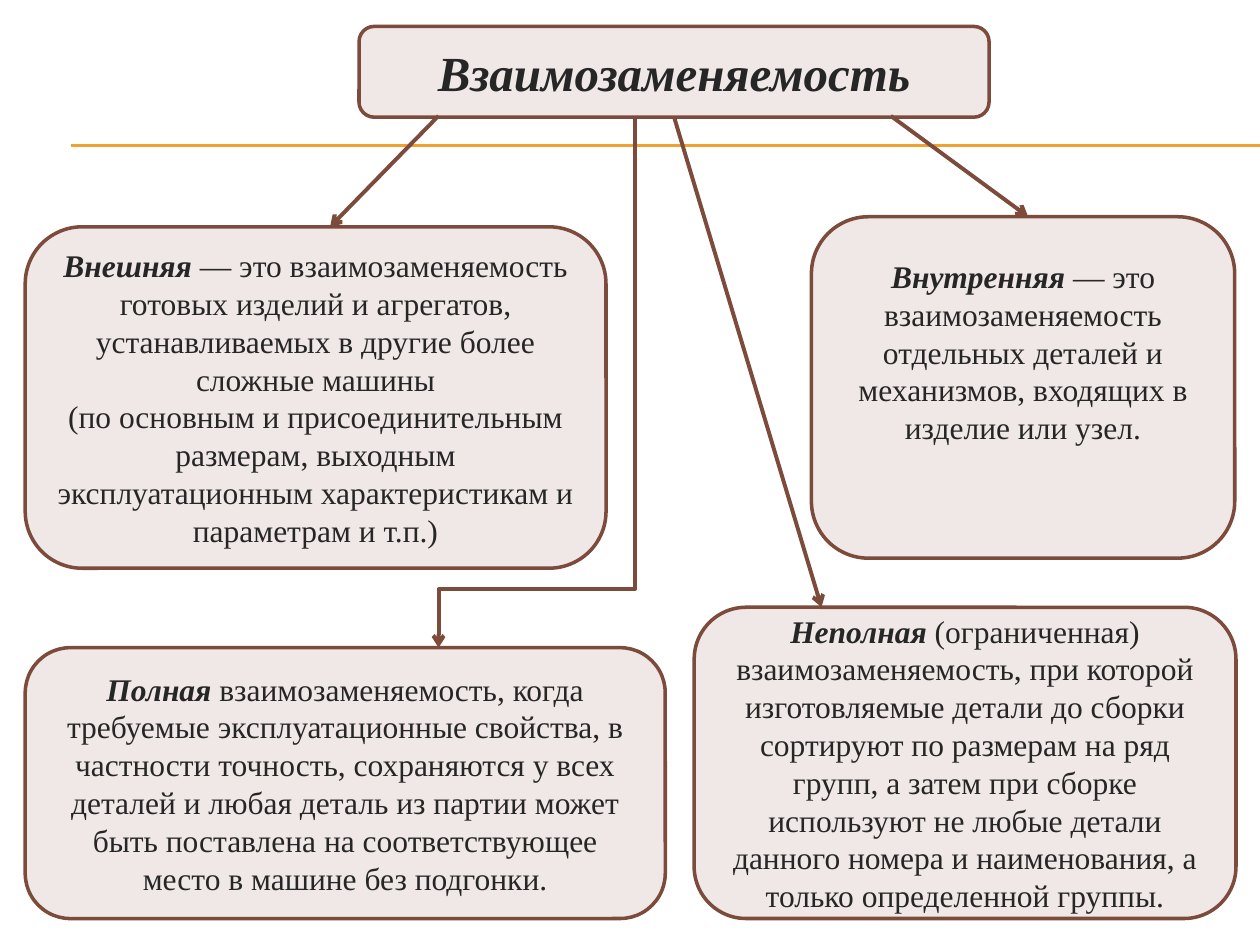
from lxml import etree
from pptx import Presentation
from pptx import util as u
from pptx.dml import color
from pptx.enum import shapes, text
from pptx.oxml import ns

FONT = "Times New Roman"
INK, BROWN, PALE, GOLD = "262626", "7C4B3B", "F0E8E6", "F0A22E"


def rgb(value):
    return color.RGBColor.from_string(value)


def add_span(para, words, size=18, bold=False, italic=False, ink=INK):
    span = para.add_run()
    span.text = words
    span.font.name = FONT
    span.font.size = u.Pt(size)
    span.font.bold = bold
    span.font.italic = italic
    span.font.color.rgb = rgb(ink)


class Diagram:
    """Holds the page and the common look of its boxes and lines."""

    def __init__(self, page, fill=PALE, outline=BROWN):
        self.page, self.fill, self.outline = page, fill, outline

    def box(self, left, top, width, height, term, *paragraphs, size=18, bottom=0.05):
        """Rounded box: an emphasised term, then the text that follows it."""
        box = self.page.shapes.add_shape(
            shapes.MSO_SHAPE.ROUNDED_RECTANGLE,
            *map(u.Inches, (left, top, width, height)))
        box.shadow.inherit = False
        box.fill.solid()
        box.fill.fore_color.rgb = rgb(self.fill)
        box.line.color.rgb = rgb(self.outline)
        box.line.width = u.Pt(2)
        frame = box.text_frame
        frame.word_wrap = True
        frame.vertical_anchor = text.MSO_ANCHOR.MIDDLE
        frame.margin_bottom = u.Inches(bottom)
        para = frame.paragraphs[0]
        para.alignment = text.PP_ALIGN.CENTER
        add_span(para, term, size, bold=True, italic=True)
        for number, words in enumerate(paragraphs):
            if number:
                para = frame.add_paragraph()
                para.alignment = text.PP_ALIGN.CENTER
            add_span(para, words, size)
        return box

    def line(self, start, end, hue=None, width=2.25, kind=shapes.MSO_CONNECTOR.STRAIGHT):
        line = self.page.shapes.add_connector(kind, *map(u.Inches, start + end))
        line.line.color.rgb = rgb(hue or self.outline)
        line.line.width = u.Pt(width)
        etree.SubElement(line.element.spPr, ns.qn("a:effectLst"))
        return line

    def arrow(self, start, end, **style):
        arrow = self.line(start, end, **style)
        etree.SubElement(arrow.line._get_or_add_ln(), ns.qn("a:tailEnd"), type="arrow")
        return arrow

    def bent_arrow(self, start, end, bend):
        """Arrow that goes down, left at the given share of its height, and down."""
        (x1, y1), (x2, y2) = start, end
        mid_x, mid_y = (x1 + x2) / 2, (y1 + y2) / 2
        length, depth = (y2 - y1) / 2, (x1 - x2) / 2
        arrow = self.arrow((mid_x - length, mid_y - depth),
                           (mid_x + length, mid_y + depth),
                           kind=shapes.MSO_CONNECTOR.ELBOW)
        properties = arrow.element.spPr
        properties.find(ns.qn("a:xfrm")).set("rot", str(90 * 60000))
        geometry = properties.find(ns.qn("a:prstGeom"))
        guides = geometry.find(ns.qn("a:avLst"))
        if guides is None:
            guides = etree.SubElement(geometry, ns.qn("a:avLst"))
        etree.SubElement(guides, ns.qn("a:gd"), name="adj1",
                         fmla=f"val {round(bend * 100000)}")


def main():
    deck = Presentation()
    deck.slide_width, deck.slide_height = u.Inches(10), u.Inches(7.5)
    diagram = Diagram(deck.slides.add_slide(deck.slide_layouts[6]))

    for y in (1.15, 1.16):
        diagram.line((0.56, y), (10, y), hue=GOLD, width=0.75)

    title = diagram.box(2.85, 0.21, 5, 0.72, "Взаимозаменяемость", size=28)
    diagram.box(6.44, 1.72, 3.36, 2.71, "Внутренняя",
                " — это взаимозаменяемость",
                "отдельных деталей и механизмов, входящих в изделие или узел.",
                bottom=0.62)
    diagram.box(0.2, 1.8, 4.61, 2.71, "Внешняя",
                " — это взаимозаменяемость готовых изделий и агрегатов, "
                "устанавливаемых в другие более сложные машины",
                "(по основным и присоединительным размерам, выходным "
                "эксплуатационным характеристикам и параметрам и т.п.)")
    diagram.box(0.2, 5.14, 5.08, 2.15, "Полная",
                " взаимозаменяемость, когда требуемые эксплуатационные свойства, "
                "в частности точность, сохраняются у всех деталей и любая деталь "
                "из партии может быть поставлена на соответствующее место в машине "
                "без подгонки.")
    diagram.box(5.51, 4.82, 4.3, 2.47, "Неполная",
                " (ограниченная) взаимозаменяемость, при которой изготовляемые "
                "детали до сборки сортируют по размерам на ряд групп, а затем при "
                "сборке используют не любые детали данного номера и наименования, "
                "а только определенной группы.")

    diagram.arrow((3.48, 0.92), (2.62, 1.8))
    diagram.arrow((7.07, 0.92), (8.16, 1.72))
    diagram.arrow((5.35, 0.93), (6.52, 4.82)).begin_connect(title, 2)
    diagram.bent_arrow((5.04, 0.92), (3.48, 5.14), bend=0.89)
    deck.save("out.pptx")


if __name__ == "__main__":
    main()
